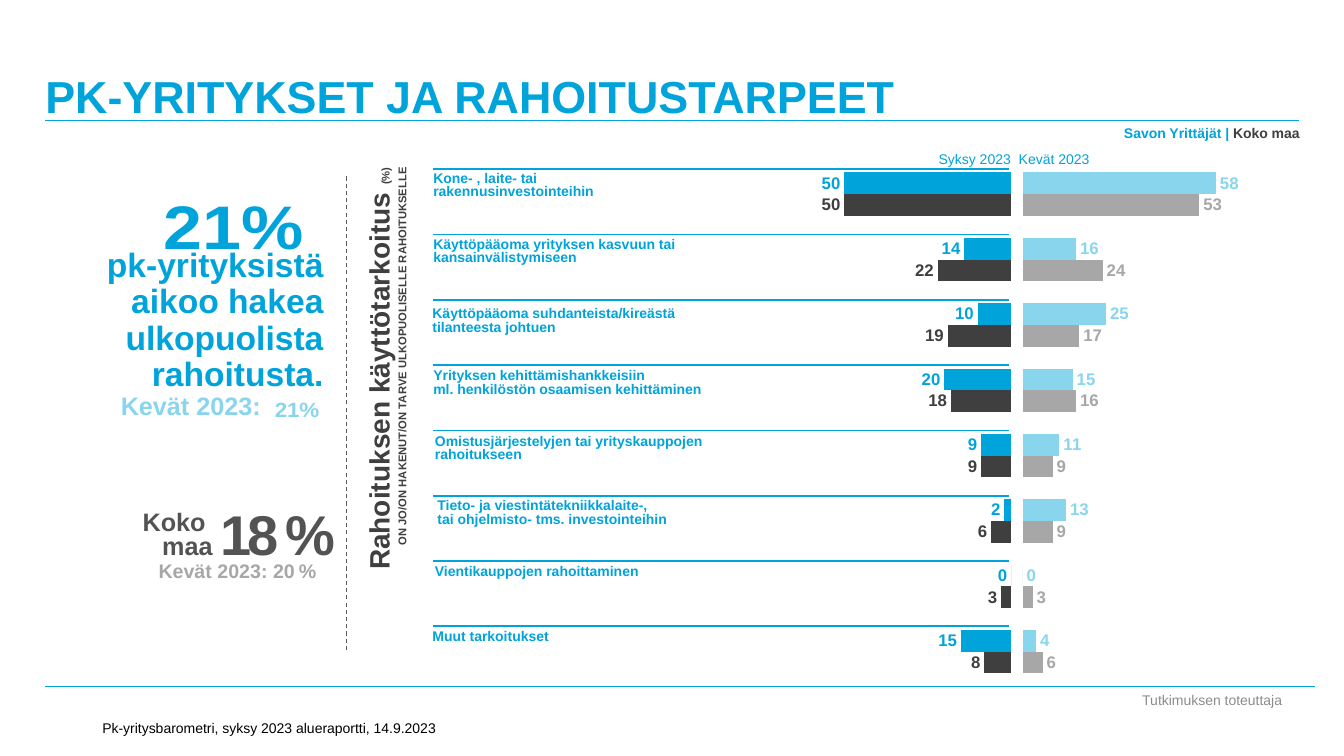
from dataclasses import dataclass
from typing import NamedTuple, Optional

from lxml.etree import SubElement
from pptx import Presentation
from pptx.chart.data import CategoryChartData
from pptx.dml.color import RGBColor
from pptx.enum.chart import XL_CHART_TYPE as ChartType, XL_LABEL_POSITION as LabelPosition
from pptx.enum.dml import MSO_LINE as Dash
from pptx.enum.shapes import MSO_CONNECTOR as Connector
from pptx.enum.text import MSO_ANCHOR as Anchor, MSO_AUTO_SIZE as AutoSize, PP_ALIGN as Align
from pptx.oxml.ns import qn
from pptx.util import Inches, Pt

FONT = "Arial"
BLUE, PALE_BLUE = "00A3DA", "8AD5EE"
DARK, GREY, PALE_GREY = "3F3F3F", "535353", "A7A7A7"

# The slide is a square grid of 160 columns and 90 rows.
CELL = Inches(7.5) / 90
FIRST_RULE, RULE_PITCH = 20.16, 7.77


class Box(NamedTuple):
    left: float
    top: float
    width: float
    height: float


class Line(NamedTuple):
    start: tuple[float, float]
    end: tuple[float, float]
    color: str = BLUE
    weight: float = 0.75
    dash: Optional[Dash] = None


@dataclass
class Span:
    """A run; size and colour are given only where they leave the paragraph's."""
    text: str
    size: Optional[float] = None
    color: Optional[str] = None
    tracking: float = 0


@dataclass
class Para:
    spans: list[Span]
    size: float
    color: str = BLUE
    bold: bool = True
    align: Align = Align.LEFT
    line_spacing: Optional[float] = None
    indent: float = 0


@dataclass
class Purpose:
    label: str
    autumn: tuple[int, int]
    spring: tuple[int, int]
    shift: tuple[float, float] = (0, 0)


PURPOSES = [
    Purpose("Kone- , laite- tai \nrakennusinvestointeihin", (50, 50), (58, 53), (0, -0.2)),
    Purpose("Käyttöpääoma yrityksen kasvuun tai kansainvälistymiseen", (14, 22), (16, 24), (0, -0.1)),
    Purpose("Käyttöpääoma suhdanteista/kireästä tilanteesta johtuen", (10, 19), (25, 17), (-0.1, 0.4)),
    Purpose("Yrityksen kehittämishankkeisiin \nml. henkilöstön osaamisen kehittäminen", (20, 18), (15, 16)),
    Purpose("Omistusjärjestelyjen tai yrityskauppojen rahoitukseen", (9, 9), (11, 9), (0.2, 0)),
    Purpose("Tieto- ja viestintätekniikkalaite-, \ntai ohjelmisto- tms. investointeihin", (2, 6), (13, 9), (0.5, -0.1)),
    Purpose("Vientikauppojen rahoittaminen", (0, 3), (0, 3), (0.2, 0)),
    Purpose("Muut tarkoitukset", (15, 8), (4, 6), (-0.1, -0.1)),
]


def cells(count: float) -> int:
    return round(count * CELL)


def rgb(color: str) -> RGBColor:
    return RGBColor.from_string(color)


def style_font(font, size: float, color: str, bold: bool) -> None:
    font.name, font.size, font.bold = FONT, Pt(size), bold
    font.color.rgb = rgb(color)


def add_text(slide, box: Box, paras: list[Para], anchor=Anchor.TOP, inset: bool = True,
             grow: bool = True, rotation: float = 0) -> None:
    shape = slide.shapes.add_textbox(*map(cells, box))
    shape.rotation = rotation
    frame = shape.text_frame
    frame.word_wrap, frame.vertical_anchor = True, anchor
    frame.auto_size = AutoSize.SHAPE_TO_FIT_TEXT if grow else AutoSize.NONE
    if not inset:
        frame.margin_left = frame.margin_right = frame.margin_top = frame.margin_bottom = 0
    for index, para in enumerate(paras):
        target = frame.add_paragraph() if index else frame.paragraphs[0]
        target.alignment, target.line_spacing = para.align, para.line_spacing
        if para.indent:
            target._p.get_or_add_pPr().set("marL", str(cells(para.indent)))
        style_font(target.font, para.size, para.color, para.bold)
        for span in para.spans:
            for number, text_line in enumerate(span.text.split("\n")):
                if number:
                    target.add_line_break()
                run = target.add_run()
                run.text = text_line
                if span.size:
                    run.font.size = Pt(span.size)
                if span.color:
                    run.font.color.rgb = rgb(span.color)
                if span.tracking:
                    run._r.get_or_add_rPr().set("spc", str(round(span.tracking * 100)))


def add_line(slide, line: Line) -> None:
    connector = slide.shapes.add_connector(
        Connector.STRAIGHT, *map(cells, (*line.start, *line.end)))
    connector.line.color.rgb = rgb(line.color)
    connector.line.width = Pt(line.weight)
    if line.dash:
        connector.line.dash_style = line.dash
    SubElement(connector._element.spPr, qn("a:effectLst"))


def set_layout(layout, **settings) -> None:
    """Fill a c:layout element with a manual position, in shares of the chart."""
    manual = SubElement(layout, qn("c:manualLayout"))
    for tag, value in settings.items():
        SubElement(manual, qn(f"c:{tag}")).set("val", str(value))


def add_bars(slide, box: Box, values: list[tuple[int, int]], colors: tuple[str, str],
             leftward: bool = False) -> None:
    data = CategoryChartData(number_format="#,##0")
    data.categories = [str(number + 1) for number in range(len(values))]
    for number, series_values in enumerate(zip(*values), 1):
        data.add_series(f"Series {number}", series_values)
    chart = slide.shapes.add_chart(ChartType.BAR_CLUSTERED, *map(cells, box), data).chart
    chart.has_legend = chart.has_title = False
    style_font(chart.font, 20, "000000", False)
    chart.category_axis.reverse_order = True
    chart.value_axis.reverse_order = leftward
    chart.value_axis.minimum_scale, chart.value_axis.maximum_scale = 0, 90
    chart.value_axis.has_major_gridlines = False
    chart.category_axis.visible = chart.value_axis.visible = False
    plot = chart.plots[0]
    plot.gap_width, plot.overlap, plot.vary_by_categories = 101, 0, False
    for series, color in zip(plot.series, colors):
        series.format.fill.solid()
        series.format.fill.fore_color.rgb = rgb(color)
        labels = series.data_labels
        labels.show_value, labels.position = True, LabelPosition.OUTSIDE_END
        labels.number_format, labels.number_format_is_linked = "#,##0", False
        style_font(labels.font, 12, color, True)
    area = chart._chartSpace.chart.plotArea
    layout = area.find(qn("c:layout"))
    if layout is None:
        layout = area.makeelement(qn("c:layout"))
        area.insert(0, layout)
    set_layout(layout, layoutTarget="inner", xMode="edge", yMode="edge",
               x=0.02, y=0.03, w=0.95, h=0.97)


def add_share(slide, box: Box, size: float, color: str, left: float, top: float) -> None:
    """Add an empty pie whose title is the share of companies."""
    data = CategoryChartData()
    data.categories = ["1"]
    data.add_series("21%", [0])
    chart = slide.shapes.add_chart(ChartType.PIE, *map(cells, box), data).chart
    chart.has_legend = False
    style_font(chart.font, size, color, True)
    chart.has_title = True
    title = chart.chart_title
    title.text_frame.text = "21%"
    style_font(title.text_frame.paragraphs[0].font, size, color, True)
    title._element.get_or_add_tx()
    for tag in ("c:layout", "c:overlay"):
        for old in title._element.findall(qn(tag)):
            title._element.remove(old)
    set_layout(SubElement(title._element, qn("c:layout")), xMode="edge", yMode="edge", x=left, y=top)
    SubElement(title._element, qn("c:overlay")).set("val", "1")


def main() -> None:
    deck = Presentation()
    deck.slide_width, deck.slide_height = cells(160), cells(90)
    slide = deck.slides.add_slide(deck.slide_layouts[6])

    add_text(slide, Box(133.9, 81.8, 20.8, 3.1), anchor=Anchor.MIDDLE, grow=False, paras=[
        Para([Span("Tutkimuksen toteuttaja")], 10, "8C8C8C", False, Align.CENTER)])
    add_bars(slide, Box(121, 17.3, 37.6, 64.2), [p.spring for p in PURPOSES], (PALE_BLUE, PALE_GREY))
    add_text(slide, Box(5.4, 0, 147.6, 14.6), anchor=Anchor.BOTTOM, inset=False, grow=False,
             paras=[Para([Span("PK-YRITYKSET JA RAHOITUSTARPEET")], 32)])
    add_text(slide, Box(11, 84, 50, 4.2), anchor=Anchor.BOTTOM, grow=False, paras=[
        Para([Span("Pk-yritysbarometri, syksy 2023 alueraportti, 14.9.2023")], 10, "000000", False)])
    for line in (Line((5.4, 14.4), (154.6, 14.4)), Line((5.4, 81.7), (156.6, 81.7)),
                 Line((41.3, 21), (41.3, 77.6), "595959", dash=Dash.DASH)):
        add_line(slide, line)
    add_text(slide, Box(97.6, 14.2, 58.3, 3.2), [
        Para([Span("Savon Yrittäjät | "), Span("Koko maa", color=DARK)], 10, align=Align.RIGHT)])

    for row, purpose in enumerate(PURPOSES):
        top = FIRST_RULE + row * RULE_PITCH
        add_line(slide, Line((51.6, top), (120.1, top), weight=1.25))
        right, down = purpose.shift
        add_text(slide, Box(50.4 + right, top + down, 38.3, 4.4),
                 [Para([Span(purpose.label)], 10, line_spacing=0.8)])

    add_text(slide, Box(5.9, 29, 33.8, 22), [
        Para([Span("pk-yrityksistä aikoo hakea ulkopuolista\nrahoitusta.")], 24,
             align=Align.RIGHT, line_spacing=0.9),
        Para([Span("Kevät 2023:")], 18, PALE_BLUE, line_spacing=0.9, indent=7.3)])
    add_text(slide, Box(25.1, 58.9, 27.5, 14.2), [
        Para([Span("18", tracking=-3), Span(" ", 18), Span("%")], 40, GREY)])
    add_text(slide, Box(16.6, 66, 22.9, 4.1), [
        Para([Span("Kevät 2023: 20"), Span(" ", 10), Span("% ")], 14, PALE_GREY, align=Align.RIGHT)])
    add_text(slide, Box(15.2, 60.4, 11.3, 7.1), [
        Para([Span("Koko \nmaa")], 18, GREY, align=Align.RIGHT, line_spacing=0.8)])

    add_bars(slide, Box(83.9, 17.3, 37.6, 64.2), [p.autumn for p in PURPOSES], (BLUE, DARK), leftward=True)
    add_share(slide, Box(16.6, 18.4, 33.8, 15), 50, BLUE, 0.04, 0.18)
    add_share(slide, Box(31.8, 46.1, 11.2, 4.8), 16, PALE_BLUE, 0.04, 0.15)
    for left, season, align in ((120.1, "Kevät 2023", Align.LEFT), (109.1, "Syksy 2023", Align.RIGHT)):
        add_text(slide, Box(left, 17.3, 12.4, 3.2), [Para([Span(season)], 10, bold=False, align=align)])
    add_text(slide, Box(16.7, 44.5, 58.3, 6.8), rotation=270, paras=[
        Para([Span("Rahoituksen käyttötarkoitus "), Span("(%)", 8)], 20, DARK, align=Align.RIGHT),
        Para([Span("ON JO/ON HAKENUT/ON TARVE ULKOPUOLISELLE RAHOITUKSELLE")], 8, DARK, align=Align.RIGHT)])

    deck.save("out.pptx")


if __name__ == "__main__":
    main()
